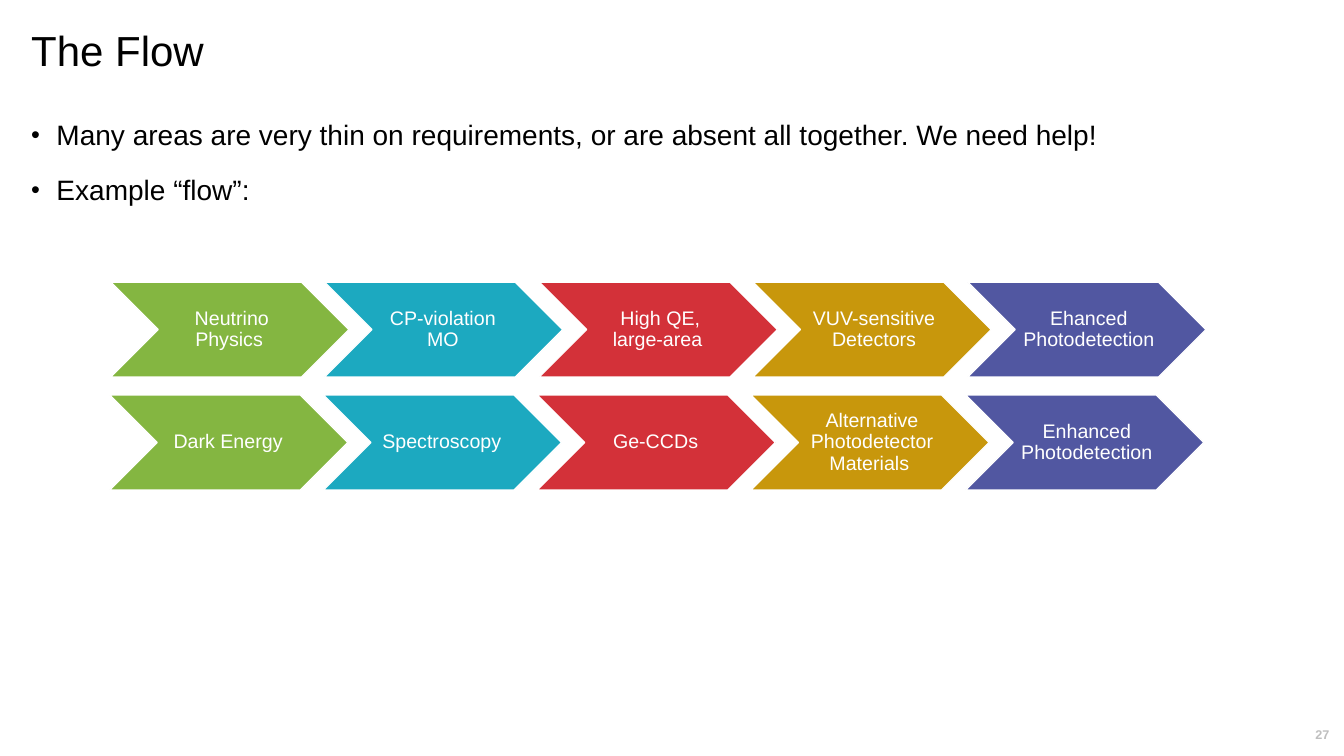
import pptx
import pptx.dml.color
import pptx.enum.shapes
import pptx.enum.text
import pptx.util
import lxml.etree

PX = 9144
FONT = "Arial"
ALIGN = pptx.enum.text.PP_ALIGN
ANCHOR = pptx.enum.text.MSO_ANCHOR
COLORS = {
    "text": "000000", "white": "FFFFFF", "number": "BFBFBF",
    "green": "84B641", "teal": "1CA9C0", "red": "D33139",
    "gold": "C8970C", "indigo": "5157A1",
}
STAGES = ["green", "teal", "red", "gold", "indigo"]
FLOWS = [
    ((110, 280, 1086, 94),
     ["Neutrino Physics ", "CP-violation \nMO ", "High QE, large-area ",
      "VUV-sensitive Detectors", "Ehanced Photodetection "]),
    ((109, 392, 1085, 94),
     ["Dark Energy ", "Spectroscopy ", "Ge-CCDs ",
      "Alternative Photodetector Materials ", "Enhanced Photodetection"]),
]
CHEVRON_WIDTH = 236


def rgb(name):
    """Return the named colour."""
    return pptx.dml.color.RGBColor.from_string(COLORS[name])


def emu(box):
    """Turn a box in px into EMU lengths."""
    return [pptx.util.Emu(v * PX) for v in box]


def place(sp, box):
    """Move a shape into a box given in px."""
    sp.left, sp.top, sp.width, sp.height = emu(box)


def frame(sp, anchor, insets):
    """Set up the text frame of a shape with insets in px."""
    tf = sp.text_frame
    tf.word_wrap = True
    tf.auto_size = pptx.enum.text.MSO_AUTO_SIZE.NONE
    tf.vertical_anchor = anchor
    tf.margin_left, tf.margin_top, tf.margin_right, tf.margin_bottom = emu(insets)
    return tf


def write(p, text, size, color, align, bold=False):
    """Fill a paragraph with runs, one per line of text."""
    p.alignment = align
    p.line_spacing = 0.9
    for i, line in enumerate(text.split("\n")):
        if i:
            p.add_line_break()
        r = p.add_run()
        r.text = line
        r.font.name = FONT
        r.font.size = pptx.util.Pt(size)
        r.font.bold = bold
        r.font.color.rgb = rgb(color)


def add_bullet(p):
    """Give a paragraph a hanging round bullet."""
    pPr = p._p.get_or_add_pPr()
    pPr.set("marL", str(25 * PX))
    pPr.set("indent", str(-25 * PX))
    ns = pptx.oxml.ns.qn
    color = lxml.etree.SubElement(pPr, ns("a:buClr"))
    lxml.etree.SubElement(color, ns("a:srgbClr"), val=COLORS["text"])
    lxml.etree.SubElement(pPr, ns("a:buSzPct"), val="90000")
    lxml.etree.SubElement(pPr, ns("a:buFont"), typeface=FONT)
    lxml.etree.SubElement(pPr, ns("a:buChar"), char="•")


def add_title(s, box, text):
    """Place the slide title."""
    sp = s.shapes.title
    place(sp, box)
    tf = frame(sp, ANCHOR.TOP, (10, 5, 10, 5))
    write(tf.paragraphs[0], text, 30, "text", ALIGN.LEFT)


def add_body(s, box, items):
    """Place the bulleted list."""
    sp = s.placeholders[1]
    place(sp, box)
    tf = frame(sp, ANCHOR.TOP, (10, 5, 10, 5))
    for i, item in enumerate(items):
        p = tf.add_paragraph() if i else tf.paragraphs[0]
        add_bullet(p)
        p.space_before = pptx.util.Pt(18 if i else 0)
        write(p, item, 20, "text", ALIGN.LEFT)


def add_flow(s, box, labels):
    """Spread a row of labelled chevrons evenly over the box."""
    left, top, width, height = box
    for i, (label, color) in enumerate(zip(labels, STAGES)):
        x = left + i * (width - CHEVRON_WIDTH) // (len(labels) - 1)
        sp = s.shapes.add_shape(pptx.enum.shapes.MSO_SHAPE.CHEVRON,
                                *emu((x, top, CHEVRON_WIDTH, height)))
        sp.shadow.inherit = False
        sp.fill.solid()
        sp.fill.fore_color.rgb = rgb(color)
        sp.line.color.rgb = rgb("white")
        sp.line.width = pptx.util.Pt(0.85)
        tf = frame(sp, ANCHOR.MIDDLE, (6, 2, 2, 2))
        write(tf.paragraphs[0], label, 14, "white", ALIGN.CENTER)


def add_number(s, box, text):
    """Place the slide number."""
    sp = s.shapes.add_textbox(*emu(box))
    tf = frame(sp, ANCHOR.MIDDLE, (0, 0, 0, 0))
    write(tf.paragraphs[0], text, 9, "number", ALIGN.CENTER, bold=True)


def main():
    """Build and save the slide."""
    prs = pptx.Presentation()
    prs.slide_width, prs.slide_height = emu((1333, 750))
    s = prs.slides.add_slide(prs.slide_layouts[1])
    add_number(s, (1296, 721, 31, 17), "27")
    for box, labels in FLOWS:
        add_flow(s, box, labels)
    add_title(s, (21, 25, 1275, 80), "The Flow")
    add_body(s, (21, 115, 1275, 504), [
        "Many areas are very thin on requirements, or are absent all together. We need help!",
        "Example “flow”:",
    ])
    prs.save("out.pptx")


if __name__ == "__main__":
    main()
